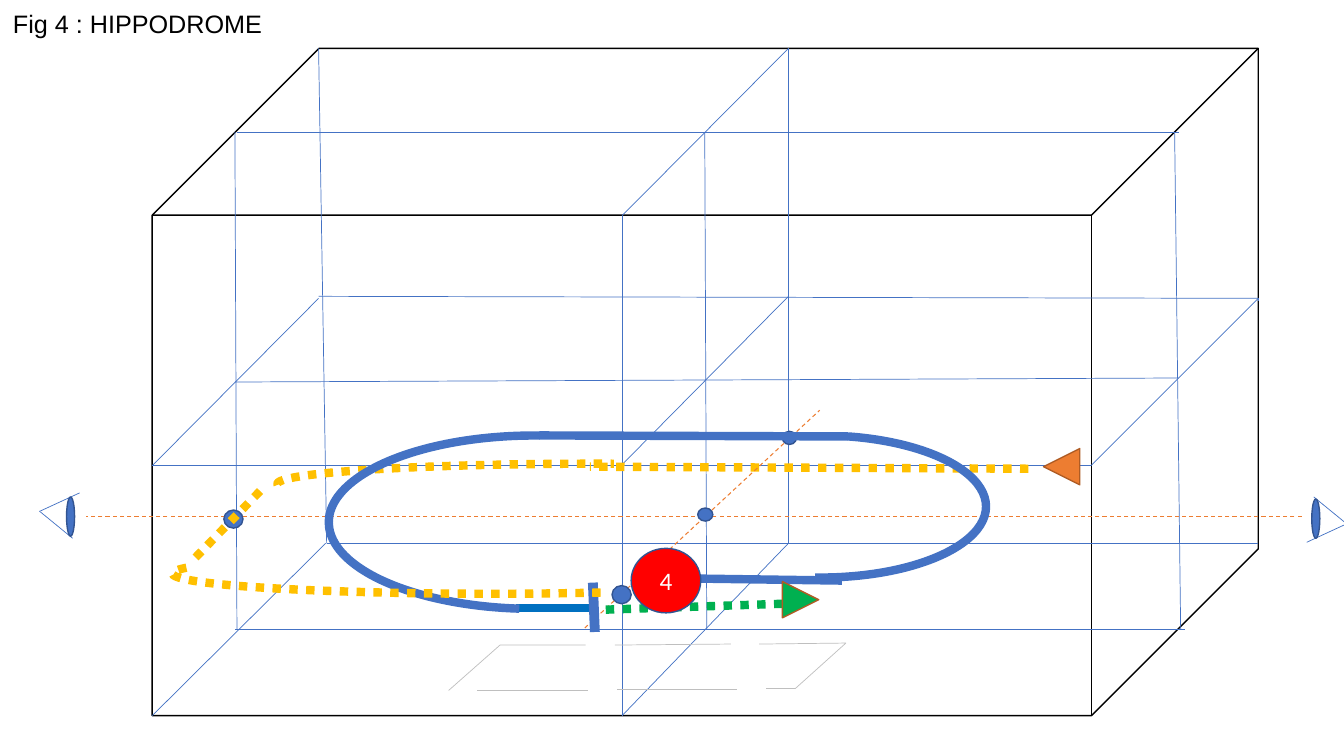
from lxml import etree
from pptx import Presentation
from pptx.dml.color import RGBColor
from pptx.enum import dml, shapes, text
from pptx.oxml import ns
from pptx.util import Inches, Pt

BLACK = RGBColor(0x00, 0x00, 0x00)
WHITE = RGBColor(0xFF, 0xFF, 0xFF)
GREY = RGBColor(0xBF, 0xBF, 0xBF)
BLUE = RGBColor(0x44, 0x72, 0xC4)
DARK_BLUE = RGBColor(0x32, 0x54, 0x91)
MID_BLUE = RGBColor(0x00, 0x70, 0xC0)
YELLOW = RGBColor(0xFF, 0xC0, 0x00)
ORANGE = RGBColor(0xED, 0x7D, 0x31)
BROWN = RGBColor(0xAF, 0x5C, 0x24)
RED = RGBColor(0xFF, 0x00, 0x00)
GREEN = RGBColor(0x00, 0xB0, 0x50)

KIND = shapes.MSO_SHAPE
DOTS = dml.MSO_LINE.ROUND_DOT  # written as sysDot
DASHES = dml.MSO_LINE.DASH
TRACK = 6  # width of the flight paths, in points

# Guide lines inside the box: x1, y1, x2, y2
GRID = [
    (12.48, 5.39, 3.24, 5.39), (3.16, 0.48, 3.24, 5.39), (3.23, 5.39, 1.51, 7.1),
    (7.82, 0.48, 6.17, 2.14), (6.17, 2.14, 6.17, 7.1), (7.82, 0.48, 7.82, 5.39),
    (6.17, 7.1, 7.82, 5.39), (12.48, 2.96, 12.48, 2.99), (12.48, 2.96, 3.16, 2.94),
    (12.48, 2.96, 10.82, 4.62), (10.82, 4.62, 1.51, 4.62), (3.16, 2.96, 1.51, 4.62),
    (7.82, 2.94, 6.16, 4.62), (11.69, 3.75, 2.33, 3.79), (6.99, 1.31, 7.01, 6.24),
    (11.65, 1.31, 11.71, 6.24), (2.33, 1.31, 2.35, 6.24), (2.35, 1.31, 11.69, 1.31),
    (2.33, 6.24, 11.75, 6.24),
]

# Broken outline of the runway on the ground
RUNWAY = [
    [(4.45, 6.85), (4.96, 6.4), (5.81, 6.4)],
    [(6.1, 6.4), (7.25, 6.39)],
    [(7.53, 6.39), (8.39, 6.38), (7.89, 6.83), (7.6, 6.83)],
    [(7.31, 6.84), (6.12, 6.84)],
    [(5.83, 6.85), (4.73, 6.85)],
]

MARKERS = [(6.92, 5.04, 0.15, 0.13), (6.07, 5.81, 0.19, 0.18),
           (2.22, 5.06, 0.19, 0.18), (7.76, 4.28, 0.14, 0.13)]


def set_stroke(item, colour, width, dash=None):
    item.line.color.rgb = colour
    item.line.width = Pt(width)
    if dash is not None:
        item.line.dash_style = dash


def add_line(parent, ends, colour=BLUE, width=0.5, dash=None):
    line = parent.add_connector(shapes.MSO_CONNECTOR.STRAIGHT, *map(Inches, ends))
    set_stroke(line, colour, width, dash)
    etree.SubElement(line._element.spPr, ns.qn("a:effectLst"))


def add_figure(parent, kind, at, fill=None, colour=DARK_BLUE, width=1, dash=None, rotation=0):
    figure = parent.add_shape(kind, *map(Inches, at))
    figure.shadow.inherit = False
    figure.rotation = rotation
    if fill is None:
        figure.fill.background()
    else:
        figure.fill.solid()
        figure.fill.fore_color.rgb = fill
    set_stroke(figure, colour, width, dash)
    return figure


def add_arc(parent, at, angles, colour, dash=None, rotation=0):
    arc = add_figure(parent, KIND.ARC, at, None, colour, TRACK, dash, rotation)
    arc.adjustments[0], arc.adjustments[1] = angles


def add_runway(parent):
    builder = parent.build_freeform(*map(Inches, RUNWAY[0][0]), scale=1.0)
    for index, stretch in enumerate(RUNWAY):
        points = [(Inches(x), Inches(y)) for x, y in stretch]
        if index:
            builder.move_to(*points[0])
        builder.add_line_segments(points[1:], close=False)
    runway = builder.convert_to_shape()
    runway.shadow.inherit = False
    runway.fill.background()
    set_stroke(runway, GREY, 0.5)


def add_eye(parent, mirrored=False):
    """Observer's eye; the right one is the left one turned by half a turn."""
    eye = parent.add_group_shape().shapes
    for ends in [(0.4, 5.07, 0.79, 4.89), (0.39, 5.07, 0.72, 5.34)]:
        if mirrored:
            ends = [total - value for total, value in zip((13.75, 10.27) * 2, ends)]
        add_line(eye, ends)
    lens = (13.01, 4.95, 0.08, 0.39) if mirrored else (0.66, 4.93, 0.08, 0.39)
    add_figure(eye, KIND.OVAL, lens, BLUE, rotation=180 if mirrored else 0)


def format_text(frame, words, size, font, colour, align):
    frame.text = words
    frame.word_wrap = True
    frame.vertical_anchor = text.MSO_ANCHOR.MIDDLE
    para = frame.paragraphs[0]
    para.alignment = align
    span = para.runs[0].font
    span.size, span.name, span.color.rgb = Pt(size), font, colour
    return para


def main():
    deck = Presentation()
    deck.slide_width, deck.slide_height = Inches(13.33), Inches(7.5)
    page = deck.slides.add_slide(deck.slide_layouts[6]).shapes

    # Flight box with its guide lines
    box = page.add_group_shape().shapes
    add_figure(box, KIND.CUBE, (1.51, 0.48, 10.97, 6.62), colour=BLACK)
    for ends in GRID:
        add_line(box, ends)

    # Entry path, runway and axes
    add_line(page, (10.2, 4.65, 5.85, 4.63), YELLOW, TRACK, DOTS)
    add_arc(page, (2.75, 4.6, 6.33, 0.4), (215.894, 78.653), YELLOW, DOTS, 180)
    add_line(page, (5.88, 6.03, 5.12, 6.03), MID_BLUE, TRACK)
    add_runway(page)
    add_line(page, (5.8, 6.23, 8.13, 4.07), ORANGE, 0.75, DASHES)
    add_line(page, (12.91, 5.12, 0.85, 5.12), ORANGE, 0.75, DASHES)
    for at in MARKERS:
        add_figure(page, KIND.OVAL, at, BLUE)

    # Observers
    add_eye(page)
    add_eye(page, mirrored=True)

    # Racetrack loop
    add_line(page, (6.91, 5.74, 8.35, 5.76), BLUE, TRACK)
    add_arc(page, (6.5, 4.32, 3.28, 1.41), (174.776, 56.652), BLUE)
    add_line(page, (5.35, 4.32, 8.41, 4.33), BLUE, TRACK)
    add_arc(page, (3.26, 4.32, 4.08, 1.72), (167.968, 56.132), BLUE, rotation=180)
    add_line(page, (5.88, 5.78, 5.9, 6.27), BLUE, 7)

    # Entry and exit arrows with the figure number
    add_figure(page, KIND.ISOSCELES_TRIANGLE, (10.35, 4.45, 0.36, 0.36), ORANGE, BROWN, rotation=270)
    add_line(page, (7.76, 5.99, 5.95, 6.05), GREEN, TRACK, DOTS)
    number = add_figure(page, KIND.OVAL, (6.26, 5.44, 0.69, 0.64), RED)
    format_text(number.text_frame, "4", 18, "Calibri", WHITE, text.PP_ALIGN.CENTER)
    add_figure(page, KIND.ISOSCELES_TRIANGLE, (7.76, 5.77, 0.36, 0.36), GREEN, BROWN, rotation=90)

    # Title
    title = page.add_textbox(*map(Inches, (0.03, 0.05, 12.26, 0.4)))
    para = format_text(title.text_frame, "Fig 4 : HIPPODROME", 18, "Arial", BLACK, text.PP_ALIGN.LEFT)
    para.line_spacing = 0.9

    # Return leg of the entry path
    add_arc(page, (1.71, 5.49, 6.33, 0.4), (113.918, 0.705), YELLOW, DOTS, 180)
    add_line(page, (1.94, 5.53, 2.62, 4.83), YELLOW, TRACK, DOTS)

    deck.save("out.pptx")


if __name__ == "__main__":
    main()
